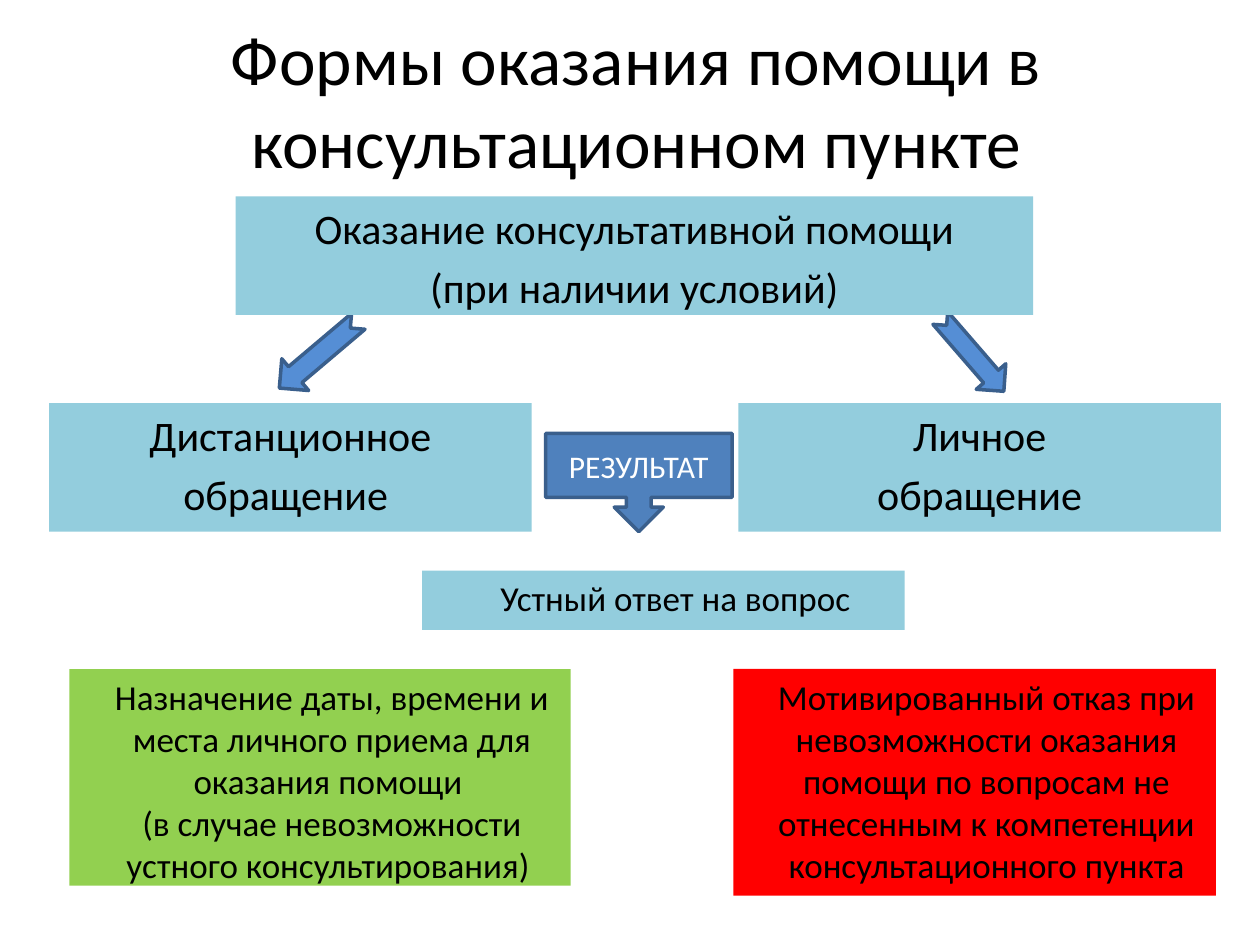
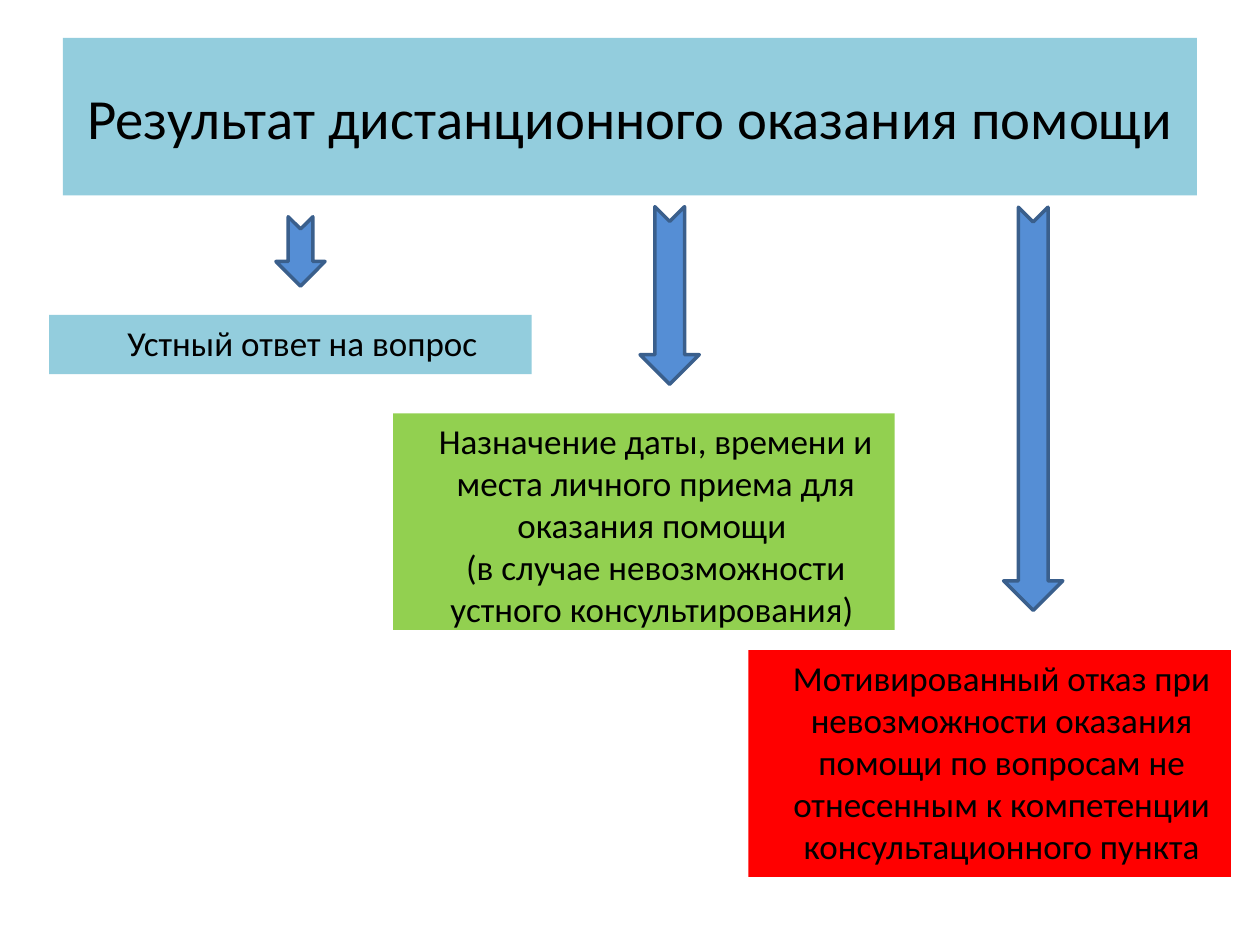
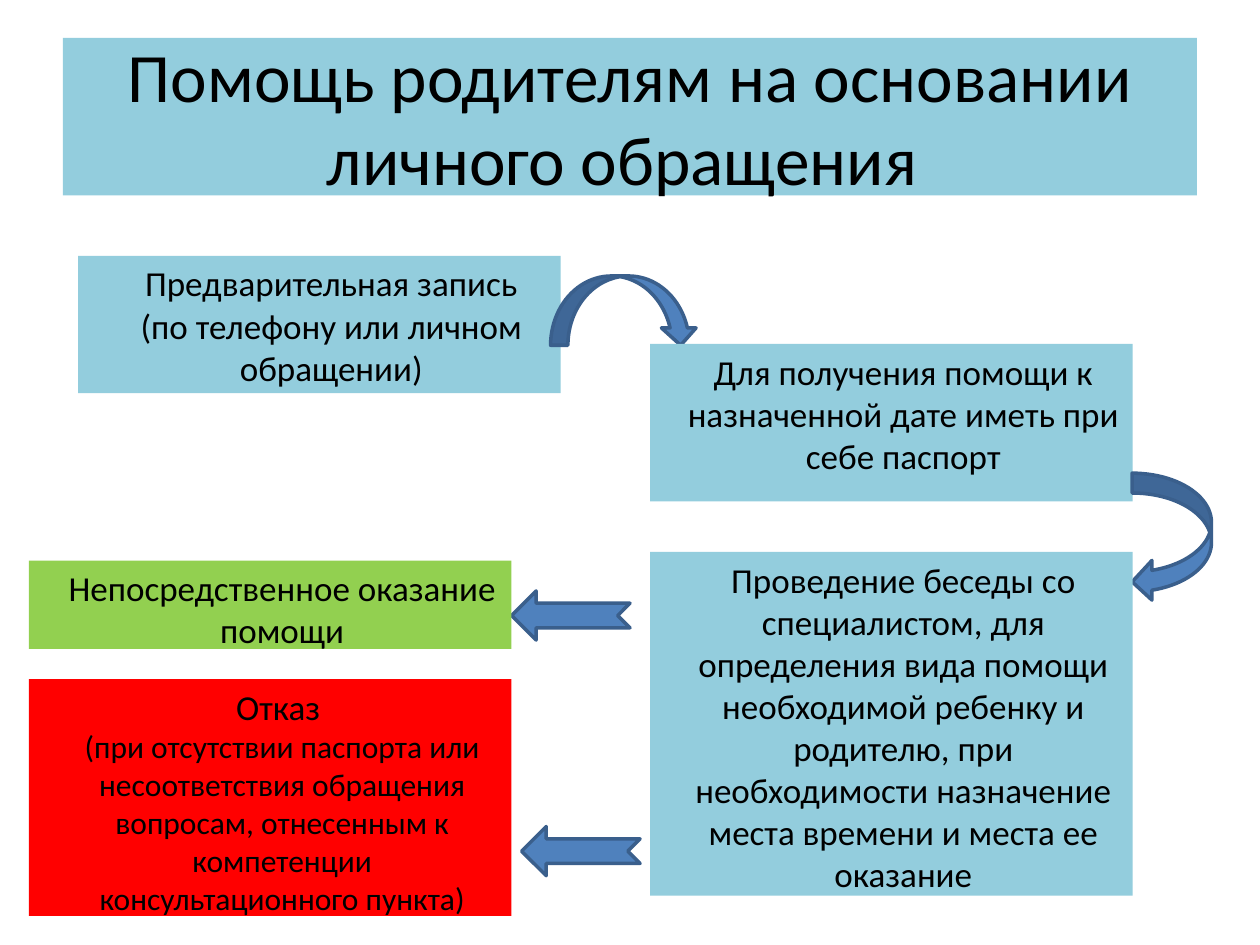
"""Build three slides on the forms of help offered by a consultation point."""
from dataclasses import dataclass

from pptx import Presentation
from pptx.dml.color import RGBColor
from pptx.enum.shapes import MSO_SHAPE
from pptx.enum.text import MSO_ANCHOR, PP_ALIGN
from pptx.util import Inches, Pt


@dataclass(frozen=True)
class Theme:
    font: str = "Calibri"
    ink: RGBColor = RGBColor(0, 0, 0)
    white: RGBColor = RGBColor(255, 255, 255)
    sky: RGBColor = RGBColor.from_string("93CDDD")
    green: RGBColor = RGBColor.from_string("92D050")
    red: RGBColor = RGBColor.from_string("FF0000")
    arrow: RGBColor = RGBColor.from_string("558ED5")
    accent: RGBColor = RGBColor.from_string("4F81BD")
    outline: RGBColor = RGBColor.from_string("3A5F8C")
    title: float = 39.6
    long_title: float = 32.4
    heading: float = 24
    body: float = 20
    small: float = 18


theme = Theme()
WIDE = 3.83
TITLE_AREA = (0.5, 0.3, 9, 1.25)
OUTCOMES = [
    (["Устный ответ на вопрос"], theme.sky, WIDE, 0.47),
    (["Назначение даты, времени и места личного приема для оказания помощи ",
      "(в случае невозможности устного консультирования) "], theme.green, 3.98, 1.72),
    (["Мотивированный отказ при невозможности оказания помощи по вопросам "
      "не отнесенным к компетенции консультационного пункта"], theme.red, WIDE, 1.8),
]


def add_block(slide, area, fill, lines, sizes, indent=(0.19, 0), gap=0,
              anchor=MSO_ANCHOR.TOP, kind=MSO_SHAPE.RECTANGLE, ink=theme.ink):
    block = slide.shapes.add_shape(kind, *map(Inches, area))
    block.shadow.inherit = False
    block.line.fill.background()
    if fill is None:
        block.fill.background()
    else:
        block.fill.solid()
        block.fill.fore_color.rgb = fill
    frame = block.text_frame
    frame.word_wrap = True
    frame.vertical_anchor = anchor
    for number, (line, size) in enumerate(zip(lines, sizes)):
        paragraph = frame.add_paragraph() if number else frame.paragraphs[0]
        paragraph.alignment = PP_ALIGN.CENTER
        paragraph.space_before = Pt(gap if number else 0)
        properties = paragraph._p.get_or_add_pPr()
        properties.set("marL", str(Inches(indent[0])))
        properties.set("indent", str(Inches(indent[1])))
        run = paragraph.add_run()
        run.text = line
        run.font.name = theme.font
        run.font.size = Pt(size)
        run.font.color.rgb = ink
    return block


def add_arrow(slide, area, fill, rotation=0, kind=MSO_SHAPE.NOTCHED_RIGHT_ARROW):
    arrow = slide.shapes.add_shape(kind, *map(Inches, area))
    arrow.shadow.inherit = False
    arrow.rotation = rotation
    arrow.fill.solid()
    arrow.fill.fore_color.rgb = fill
    arrow.line.color.rgb = theme.outline
    arrow.line.width = Pt(2)


deck = Presentation()
deck.slide_width, deck.slide_height = Inches(10), Inches(7.5)
forms, remote, personal = [deck.slides.add_slide(deck.slide_layouts[6]) for _ in range(3)]

for slide, area, fill, title, size in [
    (forms, (0.55, 0.16, 9, 1.25), None,
     "Формы оказания помощи в консультационном пункте", theme.title),
    (remote, TITLE_AREA, theme.sky,
     "Результат дистанционного оказания помощи", theme.long_title),
    (personal, TITLE_AREA, theme.sky,
     "Помощь родителям на основании личного обращения ", theme.title),
]:
    add_block(slide, area, fill, [title], [size], (0, 0), anchor=MSO_ANCHOR.MIDDLE)

add_arrow(forms, (7.33, 2.66, 0.77, 0.31), theme.arrow, 49.1)
add_arrow(forms, (2.12, 2.65, 0.82, 0.33), theme.arrow, 139.8)
for area, lines in [
    ((1.87, 1.56, 6.33, 0.94), ["Оказание консультативной помощи", "(при наличии условий)"]),
    ((0.39, 3.2, WIDE, 1.02), ["Дистанционное", "обращение "]),
    ((5.86, 3.2, WIDE, 1.02), ["Личное", "обращение"]),
]:
    add_block(forms, area, theme.sky, lines, [theme.heading] * 2, (0.56, -0.56),
              gap=theme.heading * 0.2)
result = add_block(forms, (4.33, 3.44, 1.48, 0.78), theme.accent, ["РЕЗУЛЬТАТ"], [theme.small],
                   (0, 0), anchor=MSO_ANCHOR.MIDDLE, kind=MSO_SHAPE.DOWN_ARROW_CALLOUT,
                   ink=theme.white)
result.line.color.rgb = theme.outline
result.line.width = Pt(2)

for slide, corners in [
    (forms, [(3.35, 4.53), (0.55, 5.31), (5.82, 5.31)]),
    (remote, [(0.39, 2.5), (3.12, 3.28), (5.94, 5.16)]),
]:
    for corner, (lines, fill, width, height) in zip(corners, OUTCOMES):
        add_block(slide, (*corner, width, height), fill, lines, [theme.body] * len(lines))

for area in [(2.11, 1.8, 0.55, 0.39), (4.61, 2.11, 1.41, 0.47), (6.6, 3.01, 3.2, 0.47)]:
    add_arrow(remote, area, theme.arrow, 90)

add_block(personal, (0.62, 2.03, WIDE, 1.09), theme.sky,
          ["Предварительная запись", "(по телефону или личном обращении)"], [theme.body] * 2)
add_arrow(personal, (4.37, 2.19, 1.17, 0.55), theme.accent, kind=MSO_SHAPE.CURVED_DOWN_ARROW)
add_block(personal, (5.16, 2.73, WIDE, 1.25), theme.sky,
          ["Для получения помощи к назначенной дате иметь при себе паспорт"], [theme.body])
add_arrow(personal, (8.79, 3.95, 1.02, 0.63), theme.accent, 90, MSO_SHAPE.CURVED_DOWN_ARROW)
add_block(personal, (5.16, 4.38, WIDE, 2.73), theme.sky,
          ["Проведение беседы со специалистом, для определения вида помощи необходимой ребенку "
           "и родителю, при необходимости назначение места времени и места ее оказание"],
          [theme.body])
for left, top in [(4.06, 4.69), (4.14, 6.56)]:
    add_arrow(personal, (left, top, 0.94, 0.39), theme.accent, 180)
add_block(personal, (0.23, 4.45, WIDE, 0.7), theme.green,
          ["Непосредственное оказание помощи"], [theme.body])
add_block(personal, (0.23, 5.39, WIDE, 1.88), theme.red,
          ["Отказ ", "(при отсутствии паспорта или несоответствия обращения вопросам, "
           "отнесенным к компетенции консультационного пункта)"], [theme.body, theme.small])

deck.save("out.pptx")
